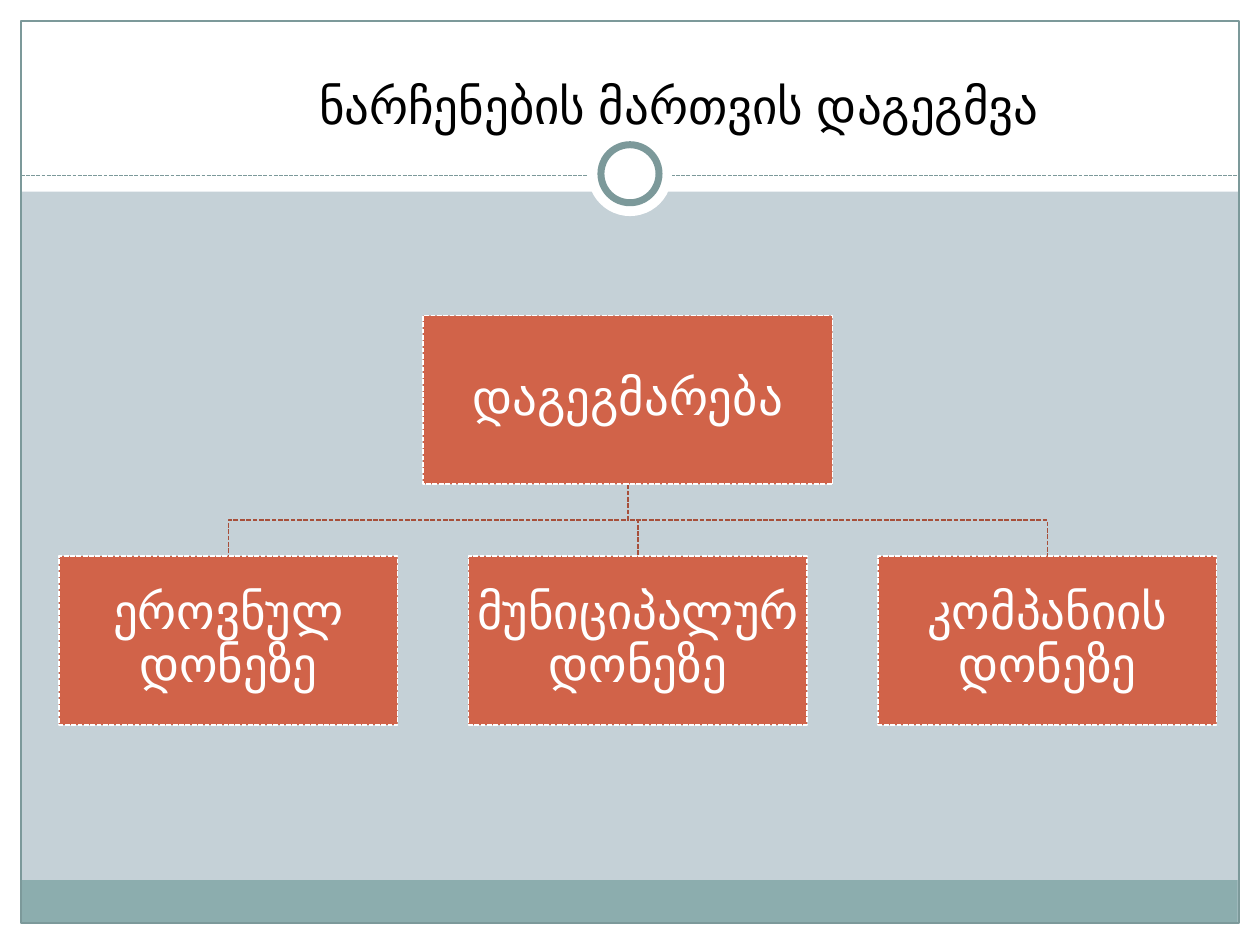
from lxml import etree
from pptx import Presentation
from pptx import util as u
from pptx.dml.color import RGBColor
from pptx.enum import dml, shapes, text
from pptx.oxml.ns import qn

Pt = u.Pt
RECTANGLE = shapes.MSO_SHAPE.RECTANGLE
OVAL = shapes.MSO_SHAPE.OVAL
WHITE, TEAL, BAND, BACKGROUND = "FFFFFF", "7C999A", "8CADAE", "C5D1D7"
BOX, BRANCH, BLACK = "D16349", "A74F3A", "000000"


def color(value):
    return RGBColor.from_string(value)


class Deck:
    """Holds the style and the current slide, and draws each kind of element."""

    font = "TeX Gyre Schola"
    size = 28

    def __init__(self, width, height):
        self.presentation = Presentation()
        self.presentation.slide_width = Pt(width)
        self.presentation.slide_height = Pt(height)
        self.slide = self.presentation.slides.add_slide(self.presentation.slide_layouts[5])
        fill = self.slide.background.fill
        fill.solid()
        fill.fore_color.rgb = color(BACKGROUND)

    def outline(self, line, value, width, dashed=False):
        if value is None:
            line.fill.background()
            return
        line.color.rgb = color(value)
        line.width = Pt(width)
        if dashed:
            line.dash_style = dml.MSO_LINE.SQUARE_DOT

    def shape(self, kind, left, top, width, height, fill=None, line=None, weight=0.75, dashed=False):
        shape = self.slide.shapes.add_shape(kind, Pt(left), Pt(top), Pt(width), Pt(height))
        shape.shadow.inherit = False
        if fill:
            shape.fill.solid()
            shape.fill.fore_color.rgb = color(fill)
        else:
            shape.fill.background()
        self.outline(shape.line, line, weight, dashed)
        return shape

    def rule(self, left, right, y):
        connector = self.slide.shapes.add_connector(
            shapes.MSO_CONNECTOR.STRAIGHT, Pt(left), Pt(y), Pt(right), Pt(y))
        self.outline(connector.line, TEAL, 0.75, True)
        etree.SubElement(connector.element.spPr, qn("a:effectLst"))

    def branch(self, points):
        points = [(Pt(x), Pt(y)) for x, y in points]
        builder = self.slide.shapes.build_freeform(*points[0])
        builder.add_line_segments(points[1:], close=False)
        shape = builder.convert_to_shape()
        shape.shadow.inherit = False
        shape.fill.background()
        self.outline(shape.line, BRANCH, 0.9, True)

    def label(self, shape, words, value, anchor):
        frame = shape.text_frame
        frame.word_wrap = True
        frame.auto_size = text.MSO_AUTO_SIZE.NONE
        frame.vertical_anchor = anchor
        paragraph = frame.paragraphs[0]
        paragraph.alignment = text.PP_ALIGN.CENTER
        run = paragraph.add_run()
        run.text = words
        run.font.name = self.font
        run.font.size = Pt(self.size)
        run.font.color.rgb = color(value)
        return frame

    def box(self, words, left, top, width, height):
        shape = self.shape(RECTANGLE, left, top, width, height, BOX, WHITE, 0.9, True)
        frame = self.label(shape, words, WHITE, text.MSO_ANCHOR.MIDDLE)
        frame.margin_left = frame.margin_right = Pt(1.4)
        frame.margin_top = frame.margin_bottom = Pt(1.4)
        frame.paragraphs[0].line_spacing = 0.9

    def title(self, words, left, top, width, height):
        title = self.slide.shapes.title
        title.left, title.top, title.width, title.height = Pt(left), Pt(top), Pt(width), Pt(height)
        self.label(title, words, BLACK, text.MSO_ANCHOR.TOP)
        title.element.getparent().append(title.element)


def main():
    deck = Deck(720, 540)
    margin = 12
    for edge in ((0, 528, 720, 12), (0, 0, 720, 109.5), (0, 0, margin, 540), (708, 0, margin, 540)):
        deck.shape(RECTANGLE, *edge, fill=WHITE)
    deck.shape(RECTANGLE, 11.75, 503, 695.5, 24.5, BAND)
    deck.shape(RECTANGLE, margin, margin, 696, 515.5, line=TEAL)
    deck.rule(margin, 708, 100.5)
    deck.shape(OVAL, 336, 75.5, 48, 48, WHITE)
    deck.shape(OVAL, 343.4, 82.7, 33.2, 33.2, WHITE, TEAL, 4)

    levels = ["ეროვნულ დონეზე", "მუნიციპალურ დონეზე", "კომპანიის დონეზე"]
    root_left, root_top, root_width, height = 241.7, 180.3, 234, 96.4
    level_left, level_top, level_width, step = 33.7, 317.8, 193.6, 234
    root_center, root_bottom = root_left + root_width / 2, root_top + height
    middle = (root_bottom + level_top) / 2
    lefts = [level_left + step * index for index in range(len(levels))]

    for left in reversed(lefts):
        center = left + level_width / 2
        deck.branch([(root_center, root_bottom), (root_center, middle),
                     (center, middle), (center, level_top)])
    deck.box("დაგეგმარება", root_left, root_top, root_width, height)
    for words, left in zip(levels, lefts):
        deck.box(words, left, level_top, level_width, height)
    deck.title("ნარჩენების მართვის დაგეგმვა", 123.8, 39.6, 528.5, 41)
    deck.presentation.save("out.pptx")


if __name__ == "__main__":
    main()
